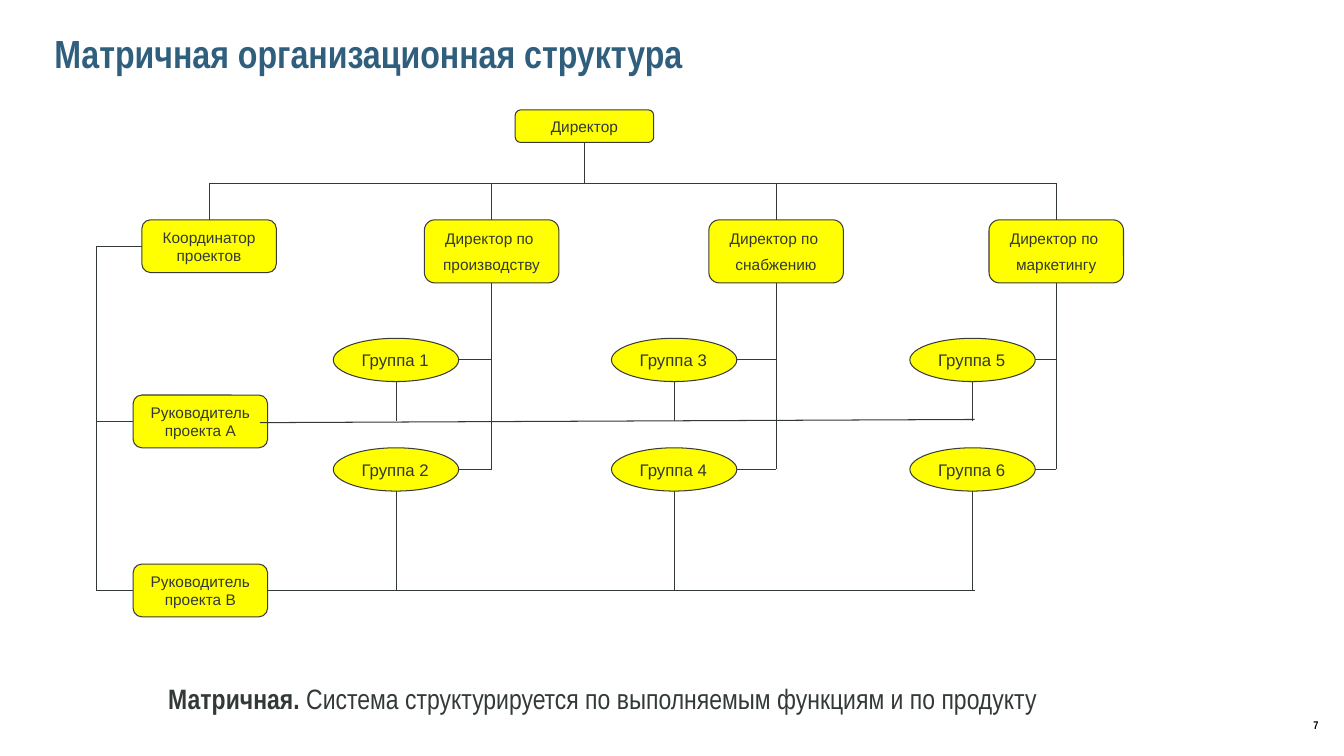
"""Build the slide about the matrix organisational structure."""
from lxml.etree import SubElement
from pptx import Presentation
from pptx.dml.color import RGBColor
from pptx.enum.shapes import MSO_CONNECTOR, MSO_SHAPE
from pptx.enum.text import MSO_ANCHOR, MSO_AUTO_SIZE, PP_ALIGN
from pptx.oxml.ns import qn
from pptx.util import Cm, Pt

TITLE = "Матричная организационная структура"
CAPTION = [("Матричная. ", True),
           ("Система структурируется по выполняемым функциям и по продукту", False)]
PAGE_NUMBER = "7"
DEPARTMENTS = [
    (12.39, 9.98, ["Директор по ", "производству"], ["Группа 1", "Группа 2"]),
    (19.56, 16.99, ["Директор по ", "снабжению"], ["Группа 3", "Группа 4"]),
    (26.62, 24.51, ["Директор по ", "маркетингу"], ["Группа 5", "Группа 6"]),
]
LEADERS = [(10.62, "Руководитель проекта А"), (14.88, "Руководитель проекта В")]

TEXT, OUTLINE, YELLOW, BLUE, BLACK = "323937", "3B3B3B", "FFFF00", "2F5F7D", "000000"
BOX_WIDTH, BOX_HEIGHT, HEAD_HEIGHT = 3.39, 1.33, 1.59
GROUP_WIDTH, GROUP_HEIGHT = 3.16, 1.09
DIRECTOR_X, DIRECTOR_Y, DIRECTOR_WIDTH, DIRECTOR_HEIGHT = 14.73, 3.18, 3.49, 0.82
COORDINATOR_X, LEADER_X, TRUNK_X = 5.27, 5.05, 2.42
BUS_Y, HEAD_TOP = 4.62, 5.54
GROUP_ROWS = [9.07, 11.83]
PROJECT_A_START, PROJECT_A_END = (6.55, 10.65), (24.56, 10.57)
PROJECT_A_DROP = 10.6

presentation = Presentation()
presentation.slide_width, presentation.slide_height = Cm(33.87), Cm(19.05)
slide = presentation.slides.add_slide(presentation.slide_layouts[5])


def color(value):
    return RGBColor.from_string(value)


def add_run(paragraph, text, font_name, size, font_color=TEXT, bold=False):
    run = paragraph.add_run()
    run.text = text
    run.font.name, run.font.size, run.font.bold = font_name, Pt(size), bold
    run.font.color.rgb = color(font_color)


def add_node(kind, x, y, width, height, lines, size=11, align=PP_ALIGN.CENTER, wrap=True):
    node = slide.shapes.add_shape(kind, Cm(x - width / 2), Cm(y - height / 2),
                                  Cm(width), Cm(height))
    node.shadow.inherit = False
    node.fill.solid()
    node.fill.fore_color.rgb = color(YELLOW)
    node.line.color.rgb = color(OUTLINE)
    node.line.width = Pt(0.75)
    frame = node.text_frame
    frame.word_wrap = wrap
    frame.vertical_anchor = MSO_ANCHOR.MIDDLE
    for index, line in enumerate(lines):
        paragraph = frame.add_paragraph() if index else frame.paragraphs[0]
        paragraph.alignment = align
        paragraph.space_after = Pt(6)
        add_run(paragraph, line, "Arial", size)


def add_line(start, end):
    line = slide.shapes.add_connector(MSO_CONNECTOR.STRAIGHT,
                                      *(Cm(value) for value in (*start, *end)))
    line.line.color.rgb = color(TEXT)
    line.line.width = Pt(0.75)
    SubElement(line._element.spPr, qn("a:effectLst"))


def add_text(x, y, width, height, align, wrap, anchor):
    frame = slide.shapes.add_textbox(Cm(x), Cm(y), Cm(width), Cm(height)).text_frame
    frame.word_wrap, frame.vertical_anchor = wrap, anchor
    frame.paragraphs[0].alignment = align
    return frame.paragraphs[0]


def add_title():
    title = slide.shapes.title
    title.left, title.top, title.width, title.height = Cm(1.12), Cm(0.23), Cm(26.52), Cm(1.65)
    frame = title.text_frame
    frame.margin_left = frame.margin_right = Cm(0.25)
    frame.margin_top, frame.margin_bottom = Cm(0.51), Cm(0.13)
    frame.auto_size, frame.vertical_anchor = MSO_AUTO_SIZE.NONE, MSO_ANCHOR.TOP
    frame.paragraphs[0].alignment = PP_ALIGN.LEFT
    add_run(frame.paragraphs[0], TITLE, "Arial Narrow", 28, BLUE, True)


def add_nodes():
    box = MSO_SHAPE.ROUNDED_RECTANGLE
    add_node(box, DIRECTOR_X, DIRECTOR_Y, DIRECTOR_WIDTH, DIRECTOR_HEIGHT, ["Директор"])
    add_node(box, COORDINATOR_X, HEAD_TOP + BOX_HEIGHT / 2, BOX_WIDTH, BOX_HEIGHT,
             ["Координатор проектов"])
    for head_x, group_x, head, groups in DEPARTMENTS:
        add_node(box, head_x, HEAD_TOP + HEAD_HEIGHT / 2, BOX_WIDTH, HEAD_HEIGHT, head)
        for y, group in zip(GROUP_ROWS, groups):
            add_node(MSO_SHAPE.OVAL, group_x, y, GROUP_WIDTH, GROUP_HEIGHT, [group],
                     12, PP_ALIGN.LEFT, False)
    for y, leader in LEADERS:
        add_node(box, LEADER_X, y, BOX_WIDTH, BOX_HEIGHT, [leader])


def add_lines():
    coordinator_y = HEAD_TOP + BOX_HEIGHT / 2
    project_b_y = LEADERS[-1][0]
    add_line((COORDINATOR_X, BUS_Y), (DEPARTMENTS[-1][0], BUS_Y))
    add_line((DIRECTOR_X, DIRECTOR_Y + DIRECTOR_HEIGHT / 2), (DIRECTOR_X, BUS_Y))
    for x in [COORDINATOR_X] + [department[0] for department in DEPARTMENTS]:
        add_line((x, BUS_Y), (x, HEAD_TOP))
    add_line((COORDINATOR_X - BOX_WIDTH / 2, coordinator_y), (TRUNK_X, coordinator_y))
    add_line((TRUNK_X, coordinator_y), (TRUNK_X, project_b_y))
    for y, _ in LEADERS:
        add_line((TRUNK_X, y), (LEADER_X - BOX_WIDTH / 2, y))
    add_line(PROJECT_A_START, PROJECT_A_END)
    add_line((LEADER_X + BOX_WIDTH / 2, project_b_y), (PROJECT_A_END[0], project_b_y))
    for head_x, group_x, _, _ in DEPARTMENTS:
        add_line((head_x, HEAD_TOP + HEAD_HEIGHT), (head_x, GROUP_ROWS[-1]))
        for y, end_y in zip(GROUP_ROWS, (PROJECT_A_DROP, project_b_y)):
            add_line((head_x, y), (group_x + GROUP_WIDTH / 2, y))
            add_line((group_x, y + GROUP_HEIGHT / 2), (group_x, end_y))


def main():
    add_title()
    add_nodes()
    add_lines()
    caption = add_text(3.99, 17.04, 22.63, 1.12, PP_ALIGN.LEFT, False, MSO_ANCHOR.TOP)
    for text, bold in CAPTION:
        add_run(caption, text, "Arial Narrow", 20, TEXT, bold)
    number = add_text(32.46, 17.96, 1.41, 0.64, PP_ALIGN.CENTER, True, MSO_ANCHOR.MIDDLE)
    add_run(number, PAGE_NUMBER, "Arial Narrow", 8, BLACK, True)
    presentation.save("out.pptx")


if __name__ == "__main__":
    main()
